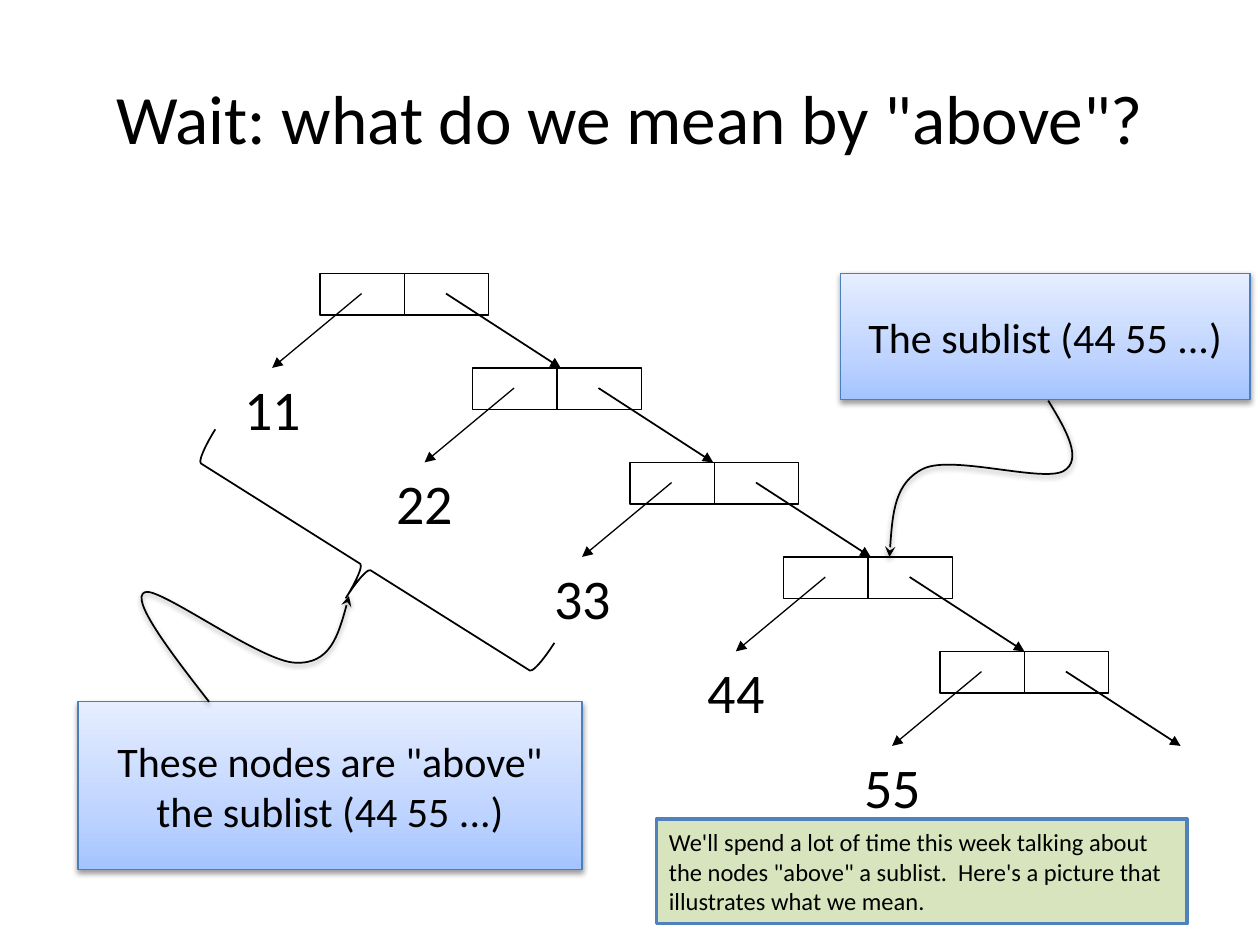
from copy import deepcopy
from dataclasses import dataclass

from lxml.etree import SubElement
from pptx import Presentation
from pptx.dml.color import RGBColor
from pptx.enum.shapes import MSO_CONNECTOR, MSO_SHAPE
from pptx.enum.text import MSO_ANCHOR, MSO_AUTO_SIZE, PP_ALIGN
from pptx.oxml.ns import qn
from pptx.util import Inches, Pt


@dataclass(frozen=True)
class Theme:
    """Hold the font, colours and sizes of the slide."""

    font: str = "Calibri"
    ink: str = "000000"
    callout_line: str = "4B7EBC"
    callout_stops: tuple = ((0, "A4C4FF"), (0.35, "BFD4FF"), (1, "E6EEFF"))
    note_fill: str = "D7E4BD"
    note_line: str = "4F81BD"
    title_size: float = 39.6
    value_size: float = 32
    callout_size: float = 24
    note_size: float = 14
    thin: float = 0.75
    medium: float = 1
    thick: float = 2


class SlideBuilder:
    """Draw styled elements on one slide."""

    def __init__(self, slide, theme):
        """Keep the slide and its theme."""
        self.slide = slide
        self.theme = theme

    def set_text(self, shape, text, size, alignment, anchor=MSO_ANCHOR.MIDDLE):
        """Set and format the text of a shape."""
        frame = shape.text_frame
        frame.text = text
        frame.word_wrap = True
        frame.vertical_anchor = anchor
        for paragraph in frame.paragraphs:
            paragraph.alignment = alignment
            for run in paragraph.runs:
                run.font.name = self.theme.font
                run.font.size = Pt(size)
                run.font.color.rgb = RGBColor.from_string(self.theme.ink)

    def outline(self, shape, width, color=None, arrow=None):
        """Set the line of a shape and its arrowhead."""
        shape.line.color.rgb = RGBColor.from_string(color or self.theme.ink)
        shape.line.width = Pt(width)
        if arrow:
            line = shape.element.spPr.find(qn("a:ln"))
            SubElement(line, qn("a:tailEnd"), type=arrow)

    def drop_shadow(self, shape):
        """Give a shape a soft shadow below it."""
        shape.shadow.inherit = False
        effects = shape.element.spPr.find(qn("a:effectLst"))
        shadow = SubElement(effects, qn("a:outerShdw"), blurRad="40000",
                            dist="20000", dir="5400000", rotWithShape="0")
        color = SubElement(shadow, qn("a:srgbClr"), val=self.theme.ink)
        SubElement(color, qn("a:alpha"), val="38000")

    def title(self, text, left, top, width, height):
        """Place and fill the title placeholder."""
        shape = self.slide.shapes.title
        shape.left, shape.top = Inches(left), Inches(top)
        shape.width, shape.height = Inches(width), Inches(height)
        self.set_text(shape, text, self.theme.title_size, PP_ALIGN.CENTER)

    def shape(self, kind, left, top, width, height, parent=None):
        """Add an unfilled preset shape without a shadow."""
        shape = (parent or self.slide).shapes.add_shape(
            kind, Inches(left), Inches(top), Inches(width), Inches(height))
        shape.shadow.inherit = False
        shape.fill.background()
        return shape

    def arrow(self, parent, start, end, width):
        """Add a straight arrow to a group."""
        connector = parent.shapes.add_connector(
            MSO_CONNECTOR.STRAIGHT, *map(Inches, start + end))
        self.outline(connector, width, arrow="triangle")
        SubElement(connector.element.spPr, qn("a:effectLst"))

    def node(self, left, top):
        """Add a list node: two cells with an arrow out of each."""
        group = self.slide.shapes.add_group_shape()
        cell_width, cell_height = 0.67, 0.33
        for index in range(2):
            cell = self.shape(MSO_SHAPE.RECTANGLE, left + index * cell_width, top,
                              cell_width, cell_height, group)
            self.outline(cell, self.theme.thin)
        arrow_top, arrow_bottom = top + 0.16, top + 0.75
        self.arrow(group, (left + 0.33, arrow_top),
                   (left - 0.38, arrow_bottom), self.theme.thin)
        self.arrow(group, (left + 1, arrow_top),
                   (left + 1.91, arrow_bottom), self.theme.medium)

    def value(self, text, left, top):
        """Add the value that a node points to."""
        box = self.slide.shapes.add_textbox(
            Inches(left), Inches(top), Inches(0.66), Inches(0.64))
        self.set_text(box, text, self.theme.value_size, PP_ALIGN.LEFT, MSO_ANCHOR.TOP)
        box.text_frame.word_wrap = False
        box.text_frame.auto_size = MSO_AUTO_SIZE.SHAPE_TO_FIT_TEXT

    def brace(self, left, top, width, height, rotation):
        """Add a rotated left brace."""
        brace = self.shape(MSO_SHAPE.LEFT_BRACE, left, top, width, height)
        brace.rotation = rotation
        self.outline(brace, self.theme.medium)

    def callout(self, text, left, top, width, height):
        """Add a shadowed box with a gradient fill."""
        box = self.shape(MSO_SHAPE.RECTANGLE, left, top, width, height)
        box.fill.gradient()
        box.fill.gradient_angle = 90
        stop_list = box.element.spPr.find(qn("a:gradFill")).find(qn("a:gsLst"))
        stop_list.insert(1, deepcopy(stop_list[0]))
        for stop, (position, color) in zip(box.fill.gradient_stops,
                                           self.theme.callout_stops):
            stop.position = position
            stop.color.rgb = RGBColor.from_string(color)
        self.outline(box, self.theme.thin, self.theme.callout_line)
        self.drop_shadow(box)
        self.set_text(box, text, self.theme.callout_size, PP_ALIGN.CENTER)

    def curve(self, start, points):
        """Add a curved arrow; each three points make one cubic segment."""
        builder = self.slide.shapes.build_freeform(*map(Inches, start))
        builder.add_line_segments(
            [tuple(map(Inches, point)) for point in points], close=False)
        shape = builder.convert_to_shape()
        outline = next(shape.element.iter(qn("a:path")))
        segments = outline.findall(qn("a:lnTo"))
        for index in range(0, len(segments), 3):
            cubic = SubElement(outline, qn("a:cubicBezTo"))
            for segment in segments[index:index + 3]:
                cubic.append(segment[0])
                outline.remove(segment)
        shape.fill.background()
        self.outline(shape, self.theme.medium, arrow="stealth")
        self.drop_shadow(shape)

    def note(self, text, left, top, width, height):
        """Add the explanatory note."""
        box = self.shape(MSO_SHAPE.RECTANGLE, left, top, width, height)
        box.fill.solid()
        box.fill.fore_color.rgb = RGBColor.from_string(self.theme.note_fill)
        self.outline(box, self.theme.thick, self.theme.note_line)
        self.set_text(box, text, self.theme.note_size, PP_ALIGN.LEFT)


def main():
    """Build the slide and save it."""
    presentation = Presentation()
    presentation.slide_width, presentation.slide_height = Inches(10), Inches(7.5)
    slide = presentation.slides.add_slide(presentation.slide_layouts[5])
    builder = SlideBuilder(slide, Theme())

    builder.title('Wait: what do we mean by "above"?', 0.5, 0.3, 9, 1.25)
    node_lefts = {"11": 2.54, "22": 3.75, "33": 5, "44": 6.22, "55": 7.46}
    for index, (value, left) in enumerate(node_lefts.items()):
        top = 2.17 + index * 0.75
        builder.node(left, top)
        builder.value(value, left - 0.7, top + 0.75)

    builder.brace(2.61, 2.91, 0.58, 3.18, 302.2)
    builder.callout('These nodes are "above" the sublist (44 55 ...)',
                    0.62, 5.57, 4, 1.33)
    builder.callout("The sublist (44 55 ...)", 6.67, 2.17, 3.25, 1)
    builder.curve((8.32, 3.18), [
        (8.46, 3.41), (8.6, 3.65), (8.44, 3.74),
        (8.27, 3.83), (7.56, 3.61), (7.33, 3.72),
        (7.1, 3.83), (7.08, 4.12), (7.06, 4.42)])
    builder.curve((1.66, 5.57), [
        (1.34, 5.16), (1.03, 4.75), (1.15, 4.7),
        (1.26, 4.65), (2.08, 5.26), (2.35, 5.26),
        (2.62, 5.27), (2.7, 5), (2.77, 4.73)])
    builder.note("We'll spend a lot of time this week talking about the nodes "
                 "\"above\" a sublist.  Here's a picture that illustrates what we mean.",
                 5.21, 6.5, 4.21, 0.83)
    presentation.save("out.pptx")


if __name__ == "__main__":
    main()
